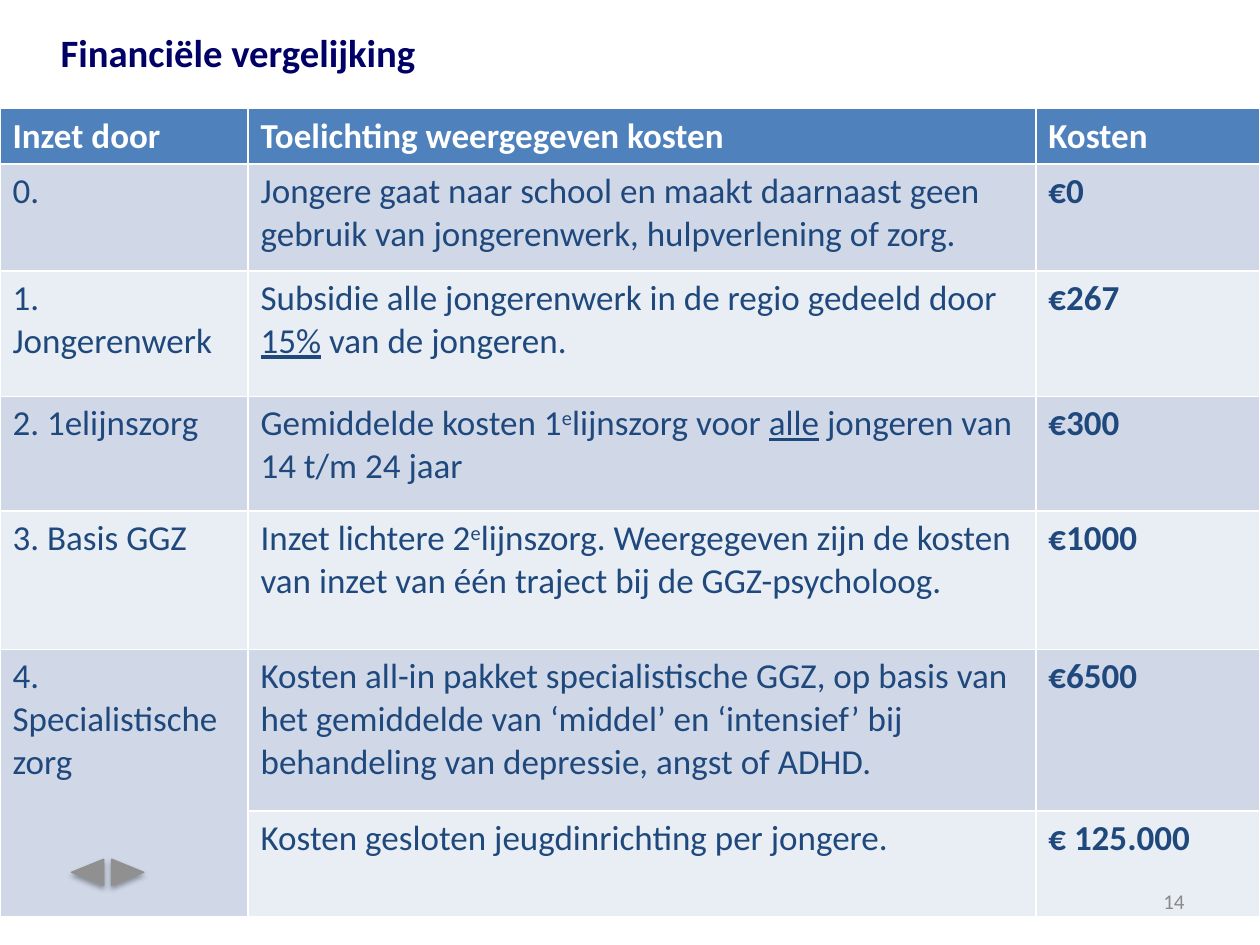
from lxml import etree
from pptx import Presentation
from pptx.dml.color import RGBColor
from pptx.enum.shapes import MSO_SHAPE
from pptx.enum.text import MSO_ANCHOR, MSO_AUTO_SIZE, PP_ALIGN
from pptx.oxml import parse_xml
from pptx.util import Cm, Pt

TRIANGLE = MSO_SHAPE.ISOSCELES_TRIANGLE
TOP, MIDDLE = MSO_ANCHOR.TOP, MSO_ANCHOR.MIDDLE
LEFT, RIGHT = PP_ALIGN.LEFT, PP_ALIGN.RIGHT
TITLE_ONLY = 5
FONT = "Calibri"
NAVY, BLUE, WHITE, GREY = "000066", "1F497D", "FFFFFF", "909090"
HEADER_FILL, BANDS = "4F81BD", ("D0D8E8", "E9EDF4")

TITLE = "Financiële vergelijking"
PAGE_NUMBER = "14"
HEADER = ("Inzet door", "Toelichting weergegeven kosten", "Kosten")
# An explanation is a list of (text, style) spans
ROWS = [
    ("0.", [("Jongere gaat naar school en maakt daarnaast geen gebruik van "
             "jongerenwerk, hulpverlening of zorg.", "")], "€0"),
    ("1. Jongerenwerk",
     [("Subsidie alle jongerenwerk in de regio gedeeld door ", ""),
      ("15%", "underline"), (" van de jongeren.", "")], "€267"),
    ("2. 1elijnszorg",
     [("Gemiddelde kosten 1", ""), ("e", "super"), ("lijnszorg voor ", ""),
      ("alle", "underline"), (" jongeren van 14 t/m 24 jaar", "")], "€300"),
    ("3. Basis GGZ",
     [("Inzet lichtere 2", ""), ("e", "super"),
      ("lijnszorg. Weergegeven zijn de kosten van inzet van één traject bij "
       "de GGZ-psycholoog.", "")], "€1000"),
    ("4. Specialistische zorg",
     [("Kosten all-in pakket specialistische GGZ, op basis van het gemiddelde "
       "van ‘middel’ en ‘intensief’ bij behandeling van depressie, angst of "
       "ADHD.", "")], "€6500"),
    ("", [("Kosten gesloten jeugdinrichting per jongere.", "")], "€ 125.000"),
]
COLUMN_WIDTHS = (5, 15.88, 4.52)
ROW_HEIGHTS = (1.1, 2.15, 2.53, 2.31, 2.79, 3.26, 2.13)
TABLE_TOP = 2.19
ARROWS = [(1.5, 270), (2.31, 90)]  # left edge, rotation

SHADOW = ('<a:effectLst xmlns:a="http://schemas.openxmlformats.org/drawingml/2006/main">'
          '<a:outerShdw blurRad="39370" dist="22860" dir="5400000" rotWithShape="0">'
          '<a:srgbClr val="000000"><a:alpha val="35000"/></a:srgbClr>'
          '</a:outerShdw></a:effectLst>')


def rgb(colour):
    return RGBColor.from_string(colour)


def format_font(font, size, colour, bold=False):
    font.name, font.size, font.bold = FONT, Pt(size), bold
    font.color.rgb = rgb(colour)


def fill_cell(cell, spans, fill, colour, bold):
    cell.fill.solid()
    cell.fill.fore_color.rgb = rgb(fill)
    paragraph = cell.text_frame.paragraphs[0]
    for text, style in spans:
        span = paragraph.add_run()
        span.text = text
        format_font(span.font, 20, colour, bold)
        if style == "underline":
            span.font.underline = True
        elif style == "super":
            span.font._element.set("baseline", "30000")


def add_cost_table(page):
    frame = page.shapes.add_table(len(ROW_HEIGHTS), len(COLUMN_WIDTHS), 0, Cm(TABLE_TOP),
                                  Cm(sum(COLUMN_WIDTHS)), Cm(sum(ROW_HEIGHTS)))
    table = frame.table
    for column, width in zip(table.columns, COLUMN_WIDTHS):
        column.width = Cm(width)
    for row, height in zip(table.rows, ROW_HEIGHTS):
        row.height = Cm(height)
    for c, text in enumerate(HEADER):
        fill_cell(table.cell(0, c), [(text, "")], HEADER_FILL, WHITE, True)
    for r, (provider, explanation, cost) in enumerate(ROWS, 1):
        band = BANDS[(r - 1) % 2]
        if provider:
            fill_cell(table.cell(r, 0), [(provider, "")], band, BLUE, False)
        fill_cell(table.cell(r, 1), explanation, band, BLUE, False)
        fill_cell(table.cell(r, 2), [(cost, "")], band, BLUE, True)
    last = len(ROWS)
    table.cell(last - 1, 0).merge(table.cell(last, 0))


def set_text(box, text, size, colour, bold, align, anchor):
    frame = box.text_frame
    frame.text = text
    frame.word_wrap = True
    frame.auto_size = MSO_AUTO_SIZE.NONE
    frame.vertical_anchor = anchor
    paragraph = frame.paragraphs[0]
    paragraph.alignment = align
    format_font(paragraph.runs[0].font, size, colour, bold)


def add_arrow(page, left, rotation):
    arrow = page.shapes.add_shape(TRIANGLE, Cm(left), Cm(17.26), Cm(0.53), Cm(0.65))
    arrow.rotation = rotation
    arrow.fill.solid()
    arrow.fill.fore_color.rgb = rgb(GREY)
    arrow.line.color.rgb = rgb(GREY)
    arrow.line.width = Pt(0.75)
    arrow._element.spPr.append(parse_xml(SHADOW))


def main():
    deck = Presentation()
    deck.slide_width, deck.slide_height = Cm(25.4), Cm(19.05)
    page = deck.slides.add_slide(deck.slide_layouts[TITLE_ONLY])

    title = page.shapes.title
    title.left, title.top, title.width, title.height = Cm(0.97), Cm(0.46), Cm(20.12), Cm(1.19)
    set_text(title, TITLE, 22.1, NAVY, True, LEFT, TOP)

    add_cost_table(page)
    number = page.shapes.add_textbox(Cm(18.21), Cm(17.65), Cm(5.92), Cm(1.02))
    set_text(number, PAGE_NUMBER, 12, "898989", False, RIGHT, MIDDLE)
    for left, rotation in ARROWS:
        add_arrow(page, left, rotation)
    deck.save("out.pptx")


if __name__ == "__main__":
    main()
